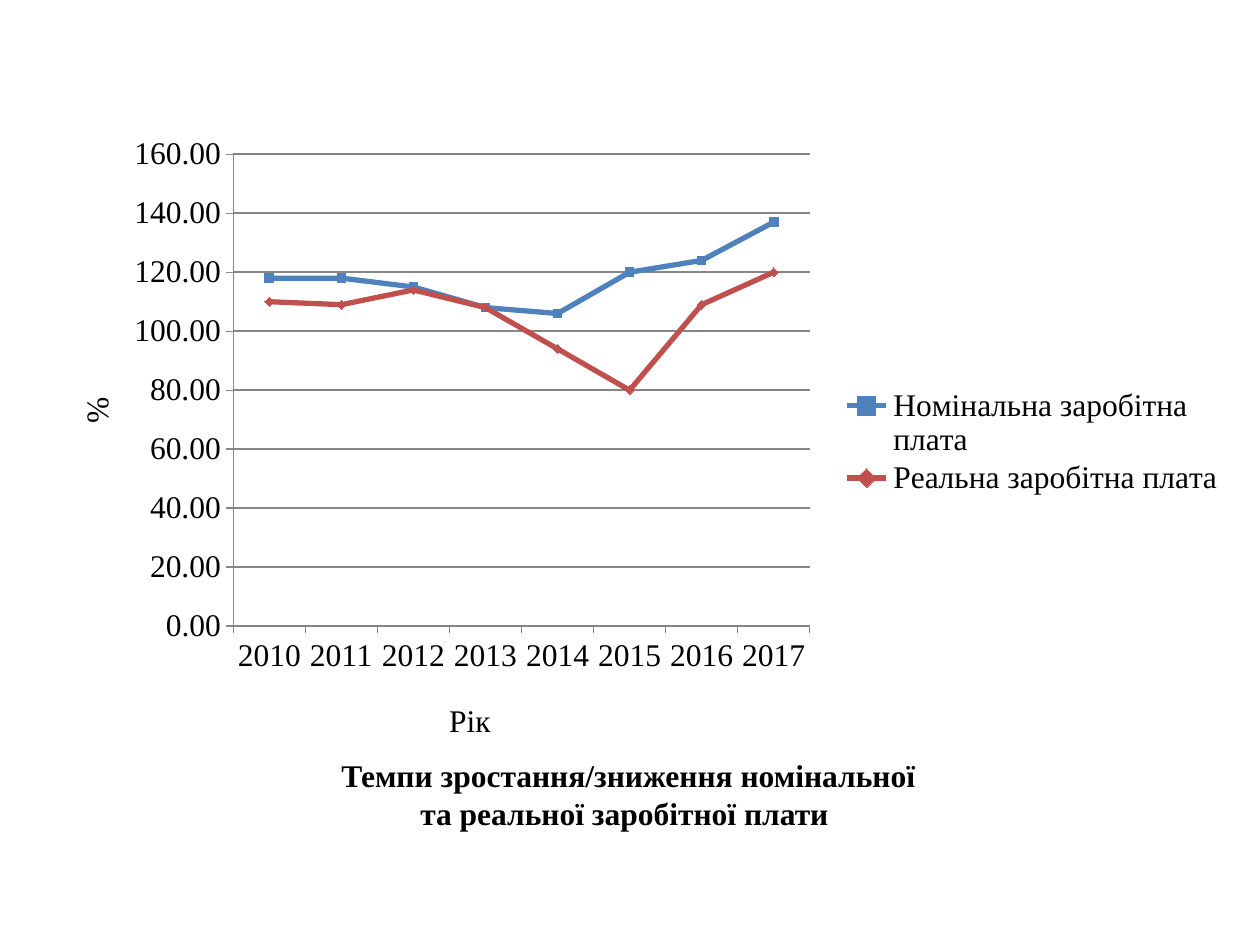
from lxml import etree
from pptx import Presentation
from pptx import util as u
from pptx.chart.data import CategoryChartData
from pptx.dml.color import RGBColor
from pptx.enum import chart as ch, text
from pptx.oxml.ns import qn

BLACK = RGBColor(0, 0, 0)
GREY = RGBColor(0x86, 0x86, 0x86)
BLUE = RGBColor(0x4F, 0x81, 0xBD)
RED = RGBColor(0xC0, 0x50, 0x4D)

YEARS = [str(year) for year in range(2010, 2018)]
SERIES = [
    ("Номінальна заробітна плата", [118, 118, 115, 108, 106, 120, 124, 137],
     BLUE, ch.XL_MARKER_STYLE.SQUARE),
    ("Реальна заробітна плата", [110, 109, 114, 108, 94, 80, 109, 120],
     RED, ch.XL_MARKER_STYLE.DIAMOND),
]


def place(element, after=None, inner=False, **fractions):
    """Give a chart part a manual layout in fractions of the chart area."""
    for old in element.findall(qn("c:layout")):
        element.remove(old)
    layout = etree.Element(qn("c:layout"))
    manual = etree.SubElement(layout, qn("c:manualLayout"))
    values = {"layoutTarget": "inner"} if inner else {}
    values.update(xMode="edge", yMode="edge", **fractions)
    for tag, value in values.items():
        etree.SubElement(manual, qn(f"c:{tag}")).set("val", str(value))
    if after:
        element.find(qn(after)).addnext(layout)
    else:
        element.insert(0, layout)


class Deck:
    FONT = {"name": "Times New Roman", "size": u.Pt(18), "bold": False}

    def __init__(self, prs):
        self.s = prs.slides.add_slide(prs.slide_layouts[6])

    def style(self, font, **changes):
        for key, value in {**self.FONT, **changes}.items():
            setattr(font, key, value)
        font.color.rgb = BLACK

    def caption(self, words, x, y, w, h):
        tf = self.s.shapes.add_textbox(*map(u.Cm, (x, y, w, h))).text_frame
        tf.word_wrap = True
        tf.auto_size = text.MSO_AUTO_SIZE.SHAPE_TO_FIT_TEXT
        p = tf.paragraphs[0]
        p.alignment = text.PP_ALIGN.CENTER
        r = p.add_run()
        r.text = words
        self.style(r.font, bold=True)

    def axis(self, axis, title, x, y):
        axis.major_tick_mark = ch.XL_TICK_MARK.OUTSIDE
        axis.format.line.color.rgb = GREY
        tf = axis.axis_title.text_frame
        tf.text = title
        self.style(tf.paragraphs[0].runs[0].font)
        place(axis.axis_title._element, "c:tx", x=x, y=y)

    def line_chart(self, x, y, w, h):
        data = CategoryChartData(number_format="0.00")
        data.categories = YEARS
        for name, values, *_ in SERIES:
            data.add_series(name, values)
        chart = self.s.shapes.add_chart(
            ch.XL_CHART_TYPE.LINE_MARKERS, *map(u.Cm, (x, y, w, h)), data).chart
        chart.has_title = False
        self.style(chart.font)

        self.axis(chart.category_axis, "Рік", 0.34, 0.9)
        val = chart.value_axis
        self.axis(val, "%", 0.03, 0.42)
        for key, value in {"minimum_scale": 0, "maximum_scale": 160,
                           "major_unit": 20, "has_major_gridlines": True}.items():
            setattr(val, key, value)
        val.tick_labels.number_format = "0.00"
        val.tick_labels.number_format_is_linked = False
        grid = val.major_gridlines.format.line
        grid.color.rgb, grid.width = GREY, u.Pt(1)

        plot = chart.plots[0]
        plot.vary_by_categories = False
        for series, (_, _, color, marker) in zip(plot.series, SERIES):
            series.smooth = False
            line = series.format.line
            line.color.rgb, line.width = color, u.Pt(3)
            series.marker.style, series.marker.size = marker, 5
            fmt = series.marker.format
            fmt.fill.solid()
            fmt.fill.fore_color.rgb = color
            fmt.line.color.rgb = color

        chart.has_legend = True
        chart.legend.position = ch.XL_LEGEND_POSITION.RIGHT
        chart.legend.include_in_layout = False
        place(chart.legend._element, "c:legendPos", x=0.67, y=0.41, w=0.32, h=0.18)
        place(chart._chartSpace.chart.plotArea, inner=True,
              x=0.165, y=0.047, w=0.48, h=0.743)


def main():
    prs = Presentation()
    prs.slide_width, prs.slide_height = u.Cm(25.4), u.Cm(19.05)
    deck = Deck(prs)
    deck.caption("Темпи зростання/зниження номінальної та реальної заробітної плати ",
                 6.32, 15.11, 12.7, 1.8)
    deck.line_chart(0.71, 2.51, 24.21, 12.8)
    prs.save("out.pptx")


if __name__ == "__main__":
    main()
